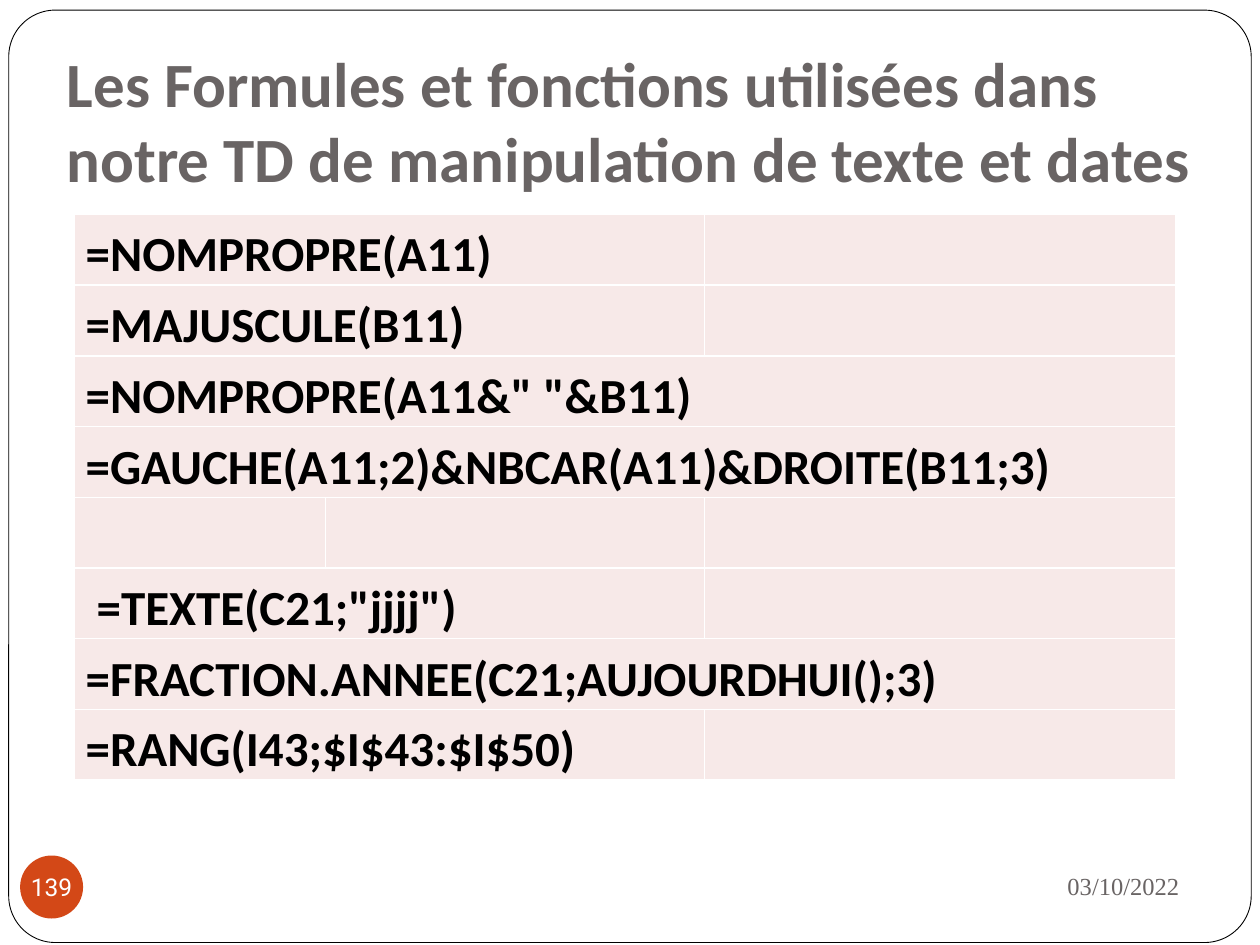
from dataclasses import dataclass

from lxml import etree
from pptx import Presentation
from pptx.dml.color import RGBColor
from pptx.enum import shapes, text
from pptx.oxml import ns
from pptx.util import Pt


@dataclass(frozen=True)
class Theme:
    white: str = "FFFFFF"
    black: str = "000000"
    grey: str = "696464"
    accent: str = "D34817"
    cell: str = "F7E9E8"
    body_font: str = "Calibri"
    date_font: str = "Times New Roman"
    number_font: str = "Roboto"
    title_size: int = 36
    formula_size: int = 28
    footer_size: int = 14


THEME = Theme()
INDENT = 6.3
COLUMN_WIDTHS = (143.3, 216.7, 269.3)
ROW_HEIGHT = 40.4

# formula, columns it spans, indent steps
FORMULAS = [
    ("=NOMPROPRE(A11)", 2, 1),
    ("=MAJUSCULE(B11)", 2, 1),
    ('=NOMPROPRE(A11&" "&B11)', 3, 1),
    ("=GAUCHE(A11;2)&NBCAR(A11)&DROITE(B11;3)", 3, 1),
    ("", 1, 0),
    ('=TEXTE(C21;"jjjj")', 2, 2),
    ("=FRACTION.ANNEE(C21;AUJOURDHUI();3)", 3, 1),
    ("=RANG(I43;$I$43:$I$50)", 2, 1),
]


def color(hex_code):
    return RGBColor.from_string(hex_code)


def write(frame, words, font, size, hex_code, bold=False, align=text.PP_ALIGN.LEFT):
    frame.text = words
    paragraph = frame.paragraphs[0]
    paragraph.alignment = align
    for run in paragraph.runs:
        run.font.name = font
        run.font.size = Pt(size)
        run.font.bold = bold
        run.font.color.rgb = color(hex_code)


def set_margins(frame, left, top, right, bottom):
    frame.margin_left, frame.margin_top = Pt(left), Pt(top)
    frame.margin_right, frame.margin_bottom = Pt(right), Pt(bottom)


def add_filled_shape(slide, kind, box, fill):
    shape = slide.shapes.add_shape(kind, *map(Pt, box))
    shape.shadow.inherit = False
    shape.fill.solid()
    shape.fill.fore_color.rgb = color(fill)
    shape.line.fill.background()
    return shape


def add_page_frame(slide):
    frame = add_filled_shape(
        slide, shapes.MSO_SHAPE.ROUNDED_RECTANGLE, (5, 5.8, 710, 532.8), THEME.white)
    frame.adjustments[0] = 0.05
    frame.line.color.rgb = color(THEME.black)
    frame.line.width = Pt(0.5)
    # Behind the title placeholder
    slide.shapes._spTree.insert(2, frame._element)


def set_title(slide, words):
    title = slide.shapes.title
    title.left, title.top, title.width, title.height = map(Pt, (31, 21.6, 663, 89.3))
    frame = title.text_frame
    frame.word_wrap = True
    frame.auto_size = text.MSO_AUTO_SIZE.NONE
    frame.vertical_anchor = text.MSO_ANCHOR.TOP
    set_margins(frame, 7.2, 3.6, 7.2, 7.2)
    write(frame, words, THEME.body_font, THEME.title_size, THEME.grey, bold=True)


def style_cell(cell):
    """Give a cell its tint and thin white borders."""
    properties = cell._tc.get_or_add_tcPr()
    for side in ("lnL", "lnR", "lnT", "lnB"):
        border = etree.SubElement(properties, ns.qn(f"a:{side}"), w=str(Pt(1)))
        fill = etree.SubElement(border, ns.qn("a:solidFill"))
        etree.SubElement(fill, ns.qn("a:srgbClr"), val=THEME.white)
    cell.fill.solid()
    cell.fill.fore_color.rgb = color(THEME.cell)


def add_formula_table(slide):
    table = slide.shapes.add_table(
        len(FORMULAS), len(COLUMN_WIDTHS), Pt(42.7), Pt(122.6),
        Pt(sum(COLUMN_WIDTHS)), Pt(ROW_HEIGHT * len(FORMULAS))).table
    table.first_row = table.horz_banding = False
    for column, width in zip(table.columns, COLUMN_WIDTHS):
        column.width = Pt(width)
    for index, (formula, span, steps) in enumerate(FORMULAS):
        table.rows[index].height = Pt(ROW_HEIGHT)
        for cell in table.rows[index].cells:
            style_cell(cell)
        if not formula:
            continue
        cell = table.cell(index, 0)
        cell.merge(table.cell(index, span - 1))
        cell.vertical_anchor = text.MSO_ANCHOR.BOTTOM
        set_margins(cell, steps * INDENT, 0, 0, 0)
        write(cell.text_frame, formula, THEME.body_font, THEME.formula_size,
              THEME.black, bold=True)


def add_date(slide, date):
    frame = slide.shapes.add_textbox(*map(Pt, (486, 487.4, 195, 37.4))).text_frame
    frame.word_wrap = True
    frame.vertical_anchor = text.MSO_ANCHOR.MIDDLE
    write(frame, date, THEME.date_font, THEME.footer_size, THEME.grey,
          align=text.PP_ALIGN.RIGHT)


def add_page_number(slide, number):
    badge = add_filled_shape(
        slide, shapes.MSO_SHAPE.OVAL, (11.5, 488.9, 36, 36), THEME.accent)
    frame = badge.text_frame
    frame.word_wrap = False
    frame.vertical_anchor = text.MSO_ANCHOR.MIDDLE
    set_margins(frame, 0, 0, 0, 0)
    write(frame, number, THEME.number_font, THEME.footer_size, THEME.white,
          align=text.PP_ALIGN.CENTER)


def main():
    deck = Presentation()
    deck.slide_width, deck.slide_height = Pt(720), Pt(540)
    slide = deck.slides.add_slide(deck.slide_layouts.get_by_name("Title Only"))
    add_page_frame(slide)
    set_title(slide, "Les Formules et fonctions utilisées dans notre TD "
                     "de manipulation de texte et dates")
    add_formula_table(slide)
    add_date(slide, "03/10/2022")
    add_page_number(slide, "139")
    deck.save("out.pptx")


if __name__ == "__main__":
    main()
